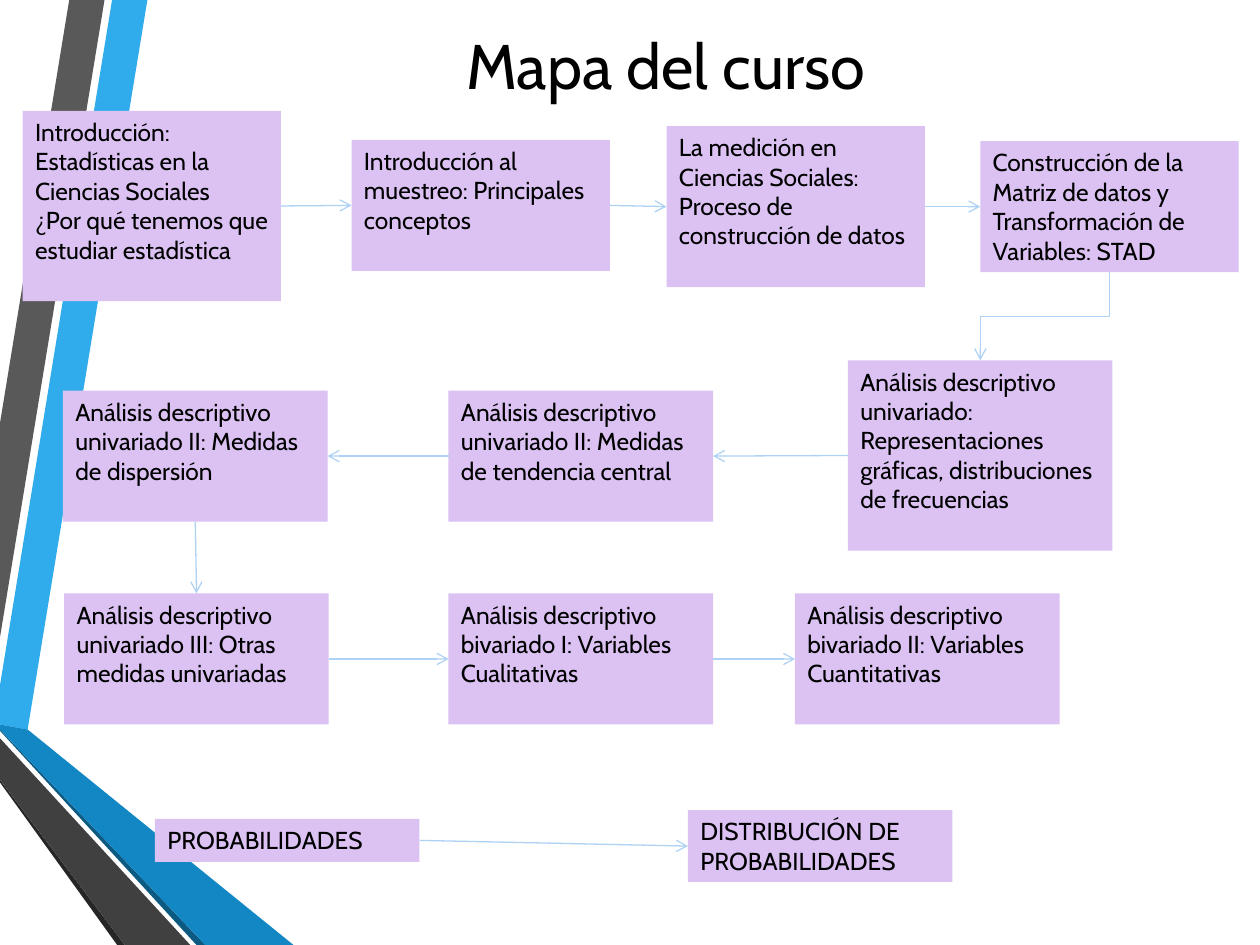
from dataclasses import dataclass

from lxml.etree import SubElement
from pptx import Presentation
from pptx.dml.color import RGBColor
from pptx.enum.shapes import MSO_CONNECTOR, MSO_SHAPE
from pptx.enum.text import MSO_ANCHOR, MSO_AUTO_SIZE, PP_ALIGN
from pptx.oxml.ns import qn
from pptx.shapes.autoshape import Shape
from pptx.shapes.connector import Connector
from pptx.slide import Slide
from pptx.util import Inches, Pt


@dataclass(frozen=True)
class Theme:
    font: str = "Cabin"
    ink: str = "000000"
    box: str = "DBC2F3"
    line: str = "AED2F4"
    sky: str = "30ACEC"
    blue: str = "1287C3"
    navy: str = "0C5A82"
    gray: str = "595959"
    dark: str = "404040"
    black: str = "262626"
    title: float = 36
    body: float = 14
    rule: float = 0.75


@dataclass(frozen=True)
class Band:
    color: str
    points: tuple[tuple[float, float], ...]


@dataclass(frozen=True)
class Topic:
    key: str
    left: float
    top: float
    width: float
    height: float
    lines: tuple[str, ...]


@dataclass(frozen=True)
class Link:
    start: str
    out: int
    end: str
    into: int
    kind: MSO_CONNECTOR = MSO_CONNECTOR.STRAIGHT


THEME = Theme()
TOP, LEFT, BOTTOM, RIGHT = range(4)
WIDE, SLIM = 2.1, 2.05
TALL, MID = 1.51, 1.04
ROW2, ROW3 = 3.1, 4.71
COL2 = 3.56

BANDS = (
    Band(THEME.sky, ((0, 5.44), (0, 5.75), (0.22, 5.79), (1.17, 0), (0.89, 0))),
    Band(THEME.gray, ((0.83, 0), (0.55, 0), (0, 3.36), (0, 5.06))),
    Band(THEME.black, ((0, 6.19), (0, 6.21), (0.93, 7.5), (0.99, 7.5))),
    Band(THEME.navy, ((0, 5.79), (0, 5.8), (1.56, 7.5), (1.63, 7.5))),
    Band(THEME.blue, ((0, 5.79), (1.63, 7.5), (2.33, 7.5), (0.22, 5.79), (0, 5.75))),
    Band(THEME.dark, ((0, 6.19), (0.99, 7.5), (1.51, 7.5), (0, 5.86))),
)

TOPICS = (
    Topic("intro", 0.18, 0.88, SLIM, TALL,
          ("Introducción: Estadísticas en la Ciencias Sociales",
           "¿Por qué tenemos que estudiar estadística")),
    Topic("sample", 2.79, 1.11, SLIM, MID,
          ("Introducción al muestreo: Principales conceptos",)),
    Topic("measure", 5.29, 1, SLIM, 1.28,
          ("La medición en Ciencias Sociales: Proceso de construcción de datos",)),
    Topic("matrix", 7.78, 1.12, SLIM, MID,
          ("Construcción de la Matriz de datos y Transformación de Variables: STAD",)),
    Topic("graphs", 6.73, 2.86, WIDE, TALL,
          ("Análisis descriptivo univariado: Representaciones gráficas, "
           "distribuciones de frecuencias",)),
    Topic("center", COL2, ROW2, WIDE, MID,
          ("Análisis descriptivo univariado II: Medidas de tendencia central",)),
    Topic("spread", 0.5, ROW2, WIDE, MID,
          ("Análisis descriptivo univariado II: Medidas de dispersión",)),
    Topic("others", 0.51, ROW3, WIDE, MID,
          ("Análisis descriptivo univariado III: Otras medidas univariadas",)),
    Topic("quality", COL2, ROW3, WIDE, MID,
          ("Análisis descriptivo bivariado I: Variables Cualitativas",)),
    Topic("number", 6.31, ROW3, WIDE, MID,
          ("Análisis descriptivo bivariado II: Variables Cuantitativas",)),
    Topic("chance", 1.23, 6.5, WIDE, 0.34, ("PROBABILIDADES",)),
    Topic("curve", 5.46, 6.43, WIDE, 0.57, ("DISTRIBUCIÓN DE PROBABILIDADES",)),
)

LINKS = (
    Link("intro", RIGHT, "sample", LEFT),
    Link("sample", RIGHT, "measure", LEFT),
    Link("measure", RIGHT, "matrix", LEFT),
    Link("matrix", BOTTOM, "graphs", TOP, MSO_CONNECTOR.ELBOW),
    Link("graphs", LEFT, "center", RIGHT),
    Link("center", LEFT, "spread", RIGHT),
    Link("spread", BOTTOM, "others", TOP),
    Link("others", RIGHT, "quality", LEFT),
    Link("quality", RIGHT, "number", LEFT),
    Link("chance", RIGHT, "curve", LEFT),
)


def paint(shape: Shape, color: str) -> None:
    shape.shadow.inherit = False
    shape.fill.solid()
    shape.fill.fore_color.rgb = RGBColor.from_string(color)
    shape.line.fill.background()


def write(shape: Shape, lines: tuple[str, ...], size: float,
          align: PP_ALIGN, frame: dict) -> None:
    text = shape.text_frame
    text.text = "\n".join(lines)
    for name, value in frame.items():
        setattr(text, name, value)
    for para in text.paragraphs:
        para.alignment = align
        for name, value in {"name": THEME.font, "size": Pt(size)}.items():
            setattr(para.font, name, value)
        para.font.color.rgb = RGBColor.from_string(THEME.ink)


def draw_band(slide: Slide, band: Band) -> None:
    first, *rest = [(Inches(x), Inches(y)) for x, y in band.points]
    pen = slide.shapes.build_freeform(*first)
    pen.add_line_segments(rest, close=True)
    paint(pen.convert_to_shape(), band.color)


def draw_title(slide: Slide) -> None:
    box = slide.shapes.add_textbox(
        Inches(1.07), Inches(0.14), Inches(8.43), Inches(0.74))
    write(box, ("Mapa del curso",), THEME.title, PP_ALIGN.CENTER,
          {"word_wrap": True, "vertical_anchor": MSO_ANCHOR.MIDDLE})


def draw_topic(slide: Slide, topic: Topic) -> Shape:
    area = (topic.left, topic.top, topic.width, topic.height)
    box = slide.shapes.add_shape(MSO_SHAPE.RECTANGLE, *map(Inches, area))
    paint(box, THEME.box)
    write(box, topic.lines, THEME.body, PP_ALIGN.LEFT,
          {"word_wrap": True, "vertical_anchor": MSO_ANCHOR.TOP,
           "auto_size": MSO_AUTO_SIZE.SHAPE_TO_FIT_TEXT})
    return box


def turn(wire: Connector) -> None:
    """Rotate an elbow a quarter turn so it leaves its start downward."""
    wide, high = wire.width, wire.height
    shift = (wide - high) // 2
    frame = {"left": wire.left + shift, "top": wire.top - shift,
             "width": high, "height": wide}
    for name, value in frame.items():
        setattr(wire, name, value)
    xfrm = wire._element.spPr.find(qn("a:xfrm"))
    xfrm.attrib.pop("flipH", None)
    xfrm.set("rot", str(90 * 60000))


def draw_link(slide: Slide, link: Link, boxes: dict[str, Shape]) -> None:
    wire = slide.shapes.add_connector(link.kind, 0, 0, 0, 0)
    wire.begin_connect(boxes[link.start], link.out)
    wire.end_connect(boxes[link.end], link.into)
    if link.kind == MSO_CONNECTOR.ELBOW:
        turn(wire)
    wire.line.color.rgb = RGBColor.from_string(THEME.line)
    wire.line.width = Pt(THEME.rule)
    SubElement(wire.line._get_or_add_ln(), qn("a:tailEnd"), type="arrow")
    SubElement(wire._element.spPr, qn("a:effectLst"))


def main() -> None:
    deck = Presentation()
    deck.slide_width, deck.slide_height = Inches(10), Inches(7.5)
    slide = deck.slides.add_slide(deck.slide_layouts[6])
    for band in BANDS:
        draw_band(slide, band)
    draw_title(slide)
    boxes = {topic.key: draw_topic(slide, topic) for topic in TOPICS}
    for link in LINKS:
        draw_link(slide, link, boxes)
    deck.save("out.pptx")


if __name__ == "__main__":
    main()
